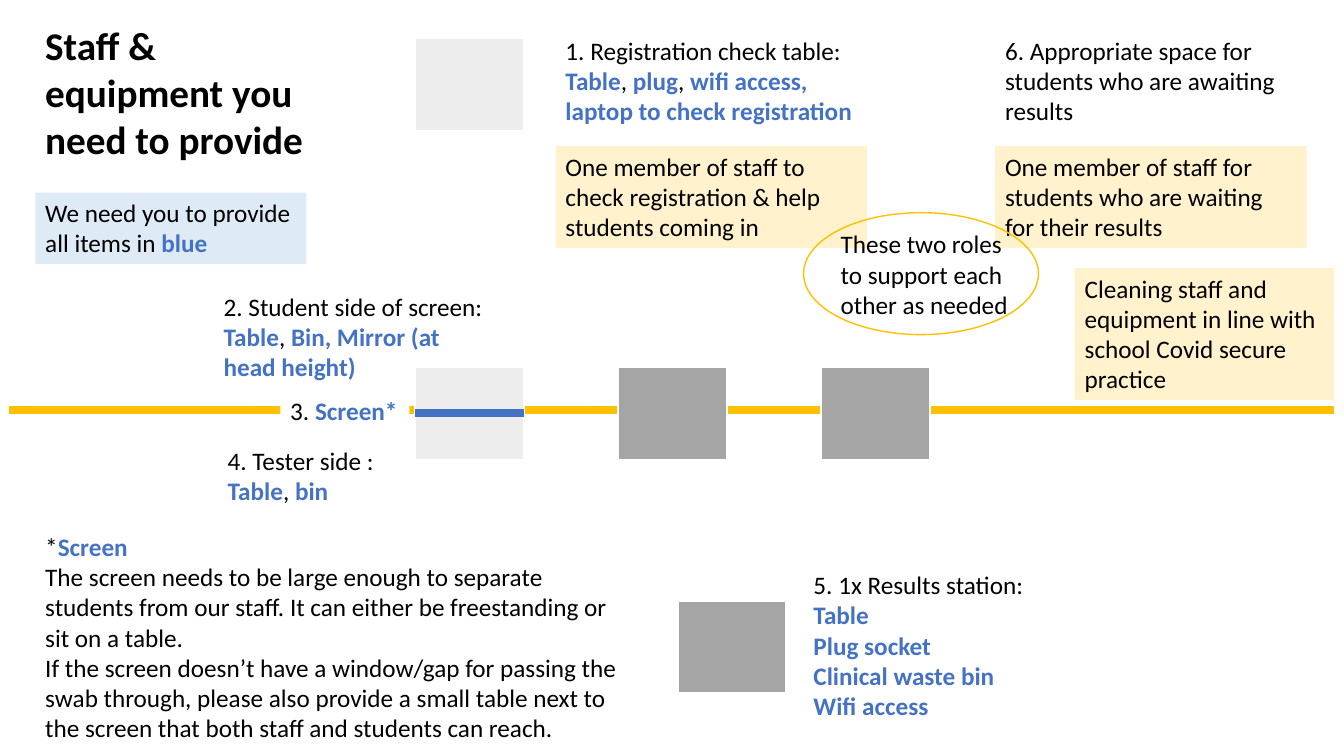
from dataclasses import dataclass

from lxml.etree import SubElement
from pptx import Presentation
from pptx.dml.color import RGBColor
from pptx.enum.shapes import MSO_CONNECTOR, MSO_SHAPE
from pptx.enum.text import MSO_ANCHOR, MSO_AUTO_SIZE, PP_ALIGN
from pptx.oxml.ns import qn
from pptx.util import Pt

PX = 9144  # EMU per px, 100 px to the inch


@dataclass(frozen=True)
class Theme:
    font: str = "Calibri"
    title: int = 28
    body: int = 18
    text: str = "000000"
    white: str = "FFFFFF"
    blue: str = "4472C4"
    pale_blue: str = "DEEBF7"
    amber: str = "FFC000"
    pale_amber: str = "FFF2CC"
    student: str = "EDEDED"
    staff: str = "A5A5A5"


T = Theme()


def emu(*lengths):
    return [n * PX for n in lengths]


def rgb(color):
    return RGBColor.from_string(color)


def set_attrs(obj, values):
    for name, value in values.items():
        setattr(obj, name, value)


def paint(sp, fill, line, width):
    """Fill and outline a shape; None as fill leaves it hollow."""
    sp.shadow.inherit = False
    if fill:
        sp.fill.solid()
        sp.fill.fore_color.rgb = rgb(fill)
    else:
        sp.fill.background()
    sp.line.color.rgb = rgb(line)
    sp.line.width = Pt(width)


def add_station(s, x, y, fill):
    sp = s.shapes.add_shape(MSO_SHAPE.RECTANGLE, *emu(x, y, 108, 92))
    paint(sp, fill, T.white, 1.5)


def add_ring(s, x, y, w, h):
    sp = s.shapes.add_shape(MSO_SHAPE.OVAL, *emu(x, y, w, h))
    paint(sp, None, T.amber, 1)


def add_bar(s, x1, x2, y, color):
    c = s.shapes.add_connector(MSO_CONNECTOR.STRAIGHT, *emu(x1, y, x2, y))
    c.line.color.rgb = rgb(color)
    c.line.width = Pt(6)
    SubElement(c._element.spPr, qn("a:effectLst"))


def add_text(s, box, *paragraphs, fill=None, size=T.body, bold=False, wrap=True):
    """Write paragraphs in which every second |-separated part is bold blue."""
    sp = s.shapes.add_textbox(*emu(*box))
    if fill:
        sp.fill.solid()
        sp.fill.fore_color.rgb = rgb(fill)
    tf = sp.text_frame
    set_attrs(tf, {"word_wrap": wrap, "auto_size": MSO_AUTO_SIZE.SHAPE_TO_FIT_TEXT,
                   "vertical_anchor": MSO_ANCHOR.TOP})
    for i, text in enumerate(paragraphs):
        p = tf.add_paragraph() if i else tf.paragraphs[0]
        p.alignment = PP_ALIGN.LEFT
        for j, part in enumerate(text.split("|")):
            if not part:
                continue
            needed = j % 2 == 1
            r = p.add_run()
            r.text = part
            set_attrs(r.font, {"name": T.font, "size": Pt(size), "bold": bold or needed})
            r.font.color.rgb = rgb(T.blue if needed else T.text)


def add_layout(s):
    """Draw the dividing line and the stations on and around it."""
    add_bar(s, 9, 1323, 407, T.amber)
    add_station(s, 412, 38, T.student)
    add_station(s, 672, 596, T.staff)
    for i, fill in enumerate((T.student, T.staff, T.staff)):
        add_station(s, 412 + 201 * i, 364, fill)
    add_bar(s, 412, 520, 410, T.blue)


def add_steps(s):
    add_text(s, (551, 30, 325, 101), "1. Registration check table:",
             "|Table|, |plug|, |wifi access, laptop to check registration")
    add_text(s, (212, 284, 280, 101), "2. Student side of screen:",
             "|Table|, |Bin, Mirror (at head height)")
    add_text(s, (278, 387, 128, 40), "3.| Screen*", fill=T.white, wrap=False)
    add_text(s, (216, 437, 167, 71), "4. Tester side :", "|Table|, |bin", wrap=False)
    add_text(s, (797, 560, 247, 162), "5. 1x Results station:", "|Table",
             "|Plug socket", "|Clinical waste bin", "|Wifi access")
    add_text(s, (987, 30, 325, 101),
             "6. Appropriate space for students who are awaiting results")


def add_staff(s):
    add_text(s, (551, 145, 309, 101),
             "One member of staff to check registration & help students coming in",
             fill=T.pale_amber)
    add_text(s, (987, 145, 309, 101),
             "One member of staff for students who are waiting for their results",
             fill=T.pale_amber)
    add_text(s, (824, 222, 194, 101), "These two roles to support each other as needed")
    add_text(s, (1066, 266, 257, 131),
             "Cleaning staff and equipment in line with school Covid secure practice",
             fill=T.pale_amber)
    add_ring(s, 797, 211, 233, 121)


def add_notes_on_provision(s):
    add_text(s, (35, 16, 280, 151), "Staff & equipment you need to provide",
             size=T.title, bold=True)
    add_text(s, (35, 191, 269, 71), "We need you to provide all items in |blue",
             fill=T.pale_blue)
    add_text(s, (35, 522, 591, 222), "*|Screen",
             "The screen needs to be large enough to separate students from our staff. "
             "It can either be freestanding or sit on a table.",
             "If the screen doesn’t have a window/gap for passing the swab through, please "
             "also provide a small table next to the screen that both staff and students "
             "can reach.")


def main():
    prs = Presentation()
    prs.slide_width, prs.slide_height = emu(1333, 750)
    s = prs.slides.add_slide(prs.slide_layouts[6])
    add_layout(s)
    add_notes_on_provision(s)
    add_steps(s)
    add_staff(s)
    prs.save("out.pptx")


if __name__ == "__main__":
    main()
